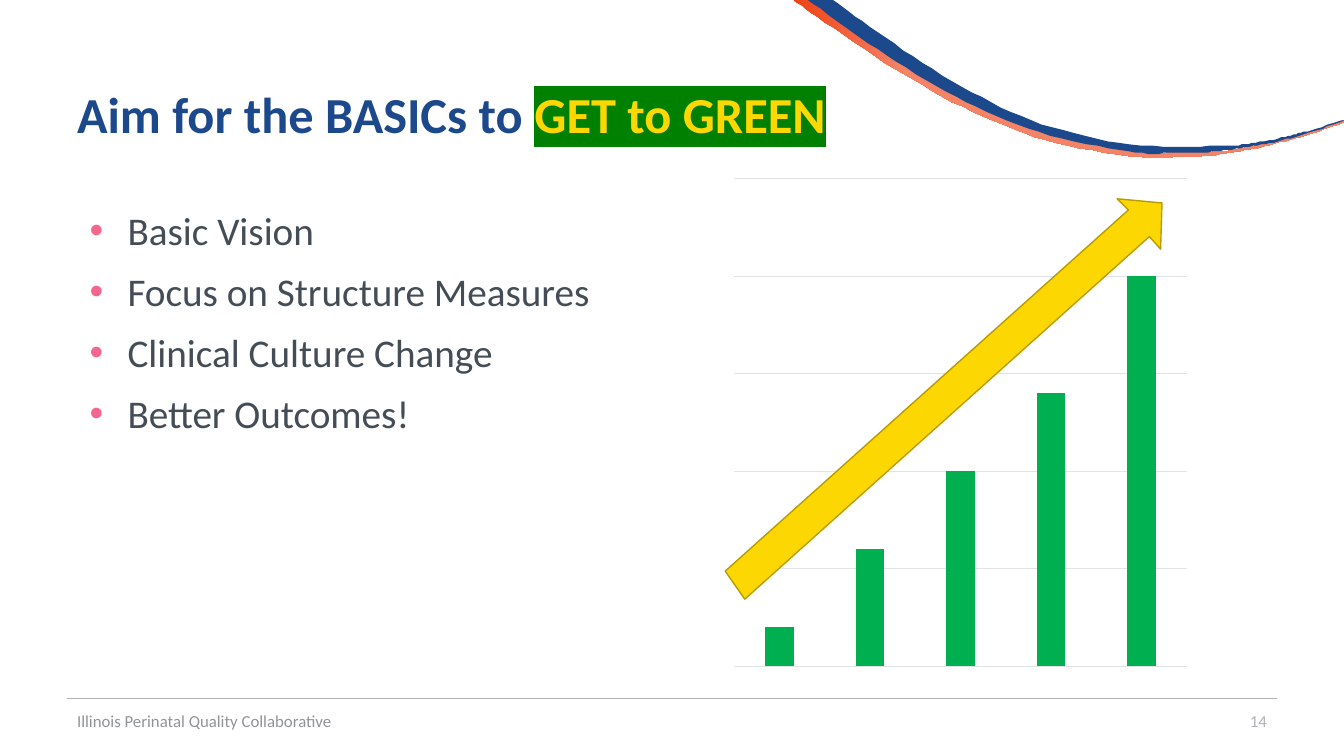
"""Build the "Aim for the BASICs to GET to GREEN" slide with its rising column chart."""
from lxml import etree
from pptx import Presentation
from pptx.chart.data import CategoryChartData
from pptx.dml.color import RGBColor
from pptx.enum.chart import XL_CHART_TYPE as ChartType
from pptx.enum.shapes import MSO_CONNECTOR as Connector
from pptx.enum.text import MSO_ANCHOR as Anchor, PP_ALIGN as Align
from pptx.oxml import parse_xml
from pptx.oxml.ns import nsdecls, qn
from pptx.util import Pt

NAVY = RGBColor(0x1C, 0x49, 0x8B)
ORANGE = RGBColor(0xEF, 0x41, 0x14)
SALMON = RGBColor(0xF5, 0x83, 0x66)
GOLD = RGBColor(0xFD, 0xD7, 0x02)
DARK_GOLD = RGBColor(0xB8, 0x9C, 0x01)
GREEN = RGBColor(0x00, 0xB0, 0x50)
SLATE = RGBColor(0x44, 0x4C, 0x55)
GREY = RGBColor(0x91, 0x94, 0x97)
LIGHT_GREY = RGBColor(0xAE, 0xB3, 0xB7)
GRID_GREY = RGBColor(0xE1, 0xE4, 0xE7)


def add_outline(points, steps=1):
    """Draw a closed outline, rounding each span between points into the given steps."""
    ends = [points[0], *points, points[-1]]
    outline = []
    for a, b, c, d in zip(ends, ends[1:], ends[2:], ends[3:]):
        for step in range(steps):
            t = step / steps
            outline.append([
                q + t / 2 * (r - p + t * (2 * p - 5 * q + 4 * r - s + t * (3 * q - p - 3 * r + s)))
                for p, q, r, s in zip(a, b, c, d)])
    outline.append(points[-1])
    builder = slide.shapes.build_freeform(*outline[0], scale=float(Pt(1)))
    builder.add_line_segments(outline[1:], close=True)
    shape = builder.convert_to_shape()
    shape.shadow.inherit = False
    shape.line.fill.background()
    return shape


def add_text(box, lines, size, color, anchor=Anchor.MIDDLE):
    """Add a wrapped text box and return its frame."""
    frame = slide.shapes.add_textbox(*map(Pt, box)).text_frame
    frame.word_wrap = True
    frame.vertical_anchor = anchor
    frame.text = "\n".join(lines)
    for paragraph in frame.paragraphs:
        for run in paragraph.runs:
            run.font.name = "Calibri"
            run.font.size = Pt(size)
            run.font.color.rgb = color
    return frame


prs = Presentation()
prs.slide_width, prs.slide_height = Pt(960), Pt(540)
slide = prs.slides.add_slide(prs.slide_layouts[6])

orange_top = [(579.6, 0), (635, 38.9), (689.8, 71.3), (748.1, 95.8), (810, 108), (841, 109.4),
              (864.7, 108.7), (888.5, 105.8), (912.2, 100.8), (935.3, 95), (960, 86.4)]
orange_bottom = [(960, 87.1), (935.3, 95.8), (912.2, 102.2), (889.2, 107.3), (865.4, 110.9),
                 (841.7, 112.3), (809.3, 111.6), (746.6, 100.1), (687.6, 76.3), (632.2, 44.6),
                 (578.9, 8.6), (565.9, 0)]
blue_top = [(595.4, 0), (632.9, 27.4), (686.9, 61.9), (744.5, 88.6), (806.4, 103),
            (870.5, 104.4), (894.2, 102.2), (918, 97.9), (933.8, 93.6), (960, 85.7)]
blue_bottom = [(960, 86.4), (933.8, 95), (910.1, 101.5), (886.3, 105.8), (862.6, 108.7),
               (838.1, 109.4), (805.7, 108), (742.3, 94.3), (682.6, 69.1), (627.1, 35.3),
               (577.4, 0)]

orange_wave = add_outline(orange_top + orange_bottom, steps=8)
orange_wave.fill.gradient()
orange_wave.fill.gradient_angle = 0
for stop, color, position in zip(orange_wave.fill.gradient_stops, (ORANGE, SALMON), (0, 0.2)):
    stop.color.rgb = color
    stop.position = position

blue_wave = add_outline(blue_top + blue_bottom, steps=8)
blue_wave.fill.solid()
blue_wave.fill.fore_color.rgb = NAVY

footer_rule = slide.shapes.add_connector(Connector.STRAIGHT, Pt(48), Pt(499), Pt(912), Pt(499))
footer_rule.line.color.rgb = LIGHT_GREY
footer_rule.line.width = Pt(0.75)
etree.SubElement(footer_rule._element.spPr, qn("a:effectLst"))

title = add_text((48, 28.8, 864, 104.4), ["Aim for the BASICs to "], 36, NAVY).paragraphs[0]
goal = title.add_run()
goal.text = "GET to GREEN"
goal.font.name = "Calibri"
goal.font.size = Pt(36)
goal.font.color.rgb = GOLD
for run in title.runs:
    run.font.bold = True
goal.font._element.find(qn("a:solidFill")).addnext(parse_xml(
    f'<a:highlight {nsdecls("a")}><a:srgbClr val="008000"/></a:highlight>'))

steps_to_green = ["Basic Vision", "Focus on Structure Measures",
                  "Clinical Culture Change", "Better Outcomes!"]
body = add_text((48, 144, 426.2, 342.7), steps_to_green, 28, SLATE, Anchor.TOP)
for index, paragraph in enumerate(body.paragraphs):
    if index:
        paragraph.space_before = Pt(10)
    properties = paragraph._p.get_or_add_pPr()
    properties.set("marL", str(Pt(36)))
    properties.set("indent", str(Pt(-27)))
    bullet_color = etree.SubElement(properties, qn("a:buClr"))
    etree.SubElement(bullet_color, qn("a:srgbClr"), val="F5668F")
    etree.SubElement(properties, qn("a:buFont"), typeface="Arial")
    etree.SubElement(properties, qn("a:buChar"), char="•")

page_number = add_text((696, 500.4, 216, 28.8), ["14"], 12, LIGHT_GREY)
page_number.paragraphs[0].alignment = Align.RIGHT
add_text((48, 500.4, 324, 28.8), ["Illinois Perinatal Quality Collaborative"], 12, GREY)

progress = CategoryChartData()
progress.categories = ["1", "2", "3", "4", "5"]
progress.add_series("Series 1", (10, 30, 50, 70, 100))
chart = slide.shapes.add_chart(ChartType.COLUMN_CLUSTERED, Pt(524.2), Pt(127.4),
                               Pt(344.2), Pt(370.8), progress).chart
chart.has_legend = False
chart.has_title = False
chart.font.name = "Arial"
chart.font.size = Pt(10)
chart.font.color.rgb = SLATE
chart.category_axis.visible = False
values = chart.value_axis
values.visible = False
values.minimum_scale, values.maximum_scale, values.major_unit = 0, 125, 25
values.has_major_gridlines = True
values.major_gridlines.format.line.color.rgb = GRID_GREY
values.major_gridlines.format.line.width = Pt(0.75)
columns = chart.plots[0]
columns.gap_width, columns.overlap = 219, -27
columns.vary_by_categories = False
columns.series[0].format.fill.solid()
columns.series[0].format.fill.fore_color.rgb = GREEN

plot_area = chart._chartSpace.find(".//" + qn("c:plotArea"))
for layout in plot_area.findall(qn("c:layout")):
    plot_area.remove(layout)
layout = etree.Element(qn("c:layout"))
plot_area.insert(0, layout)
manual = etree.SubElement(layout, qn("c:manualLayout"))
for tag, setting in (("layoutTarget", "inner"), ("xMode", "edge"), ("yMode", "edge"),
                     ("x", "0"), ("y", "0"), ("w", "0.94"), ("h", "0.94")):
    etree.SubElement(manual, qn(f"c:{tag}"), val=setting)

growth_arrow = add_outline([(517.7, 408.2), (805.7, 150.5), (797.8, 141.8), (830.2, 145.4),
                            (828.7, 177.8), (820.8, 169.2), (532.1, 427.7)])
growth_arrow.fill.solid()
growth_arrow.fill.fore_color.rgb = GOLD
growth_arrow.line.color.rgb = DARK_GOLD
growth_arrow.line.width = Pt(1)

prs.save("out.pptx")
